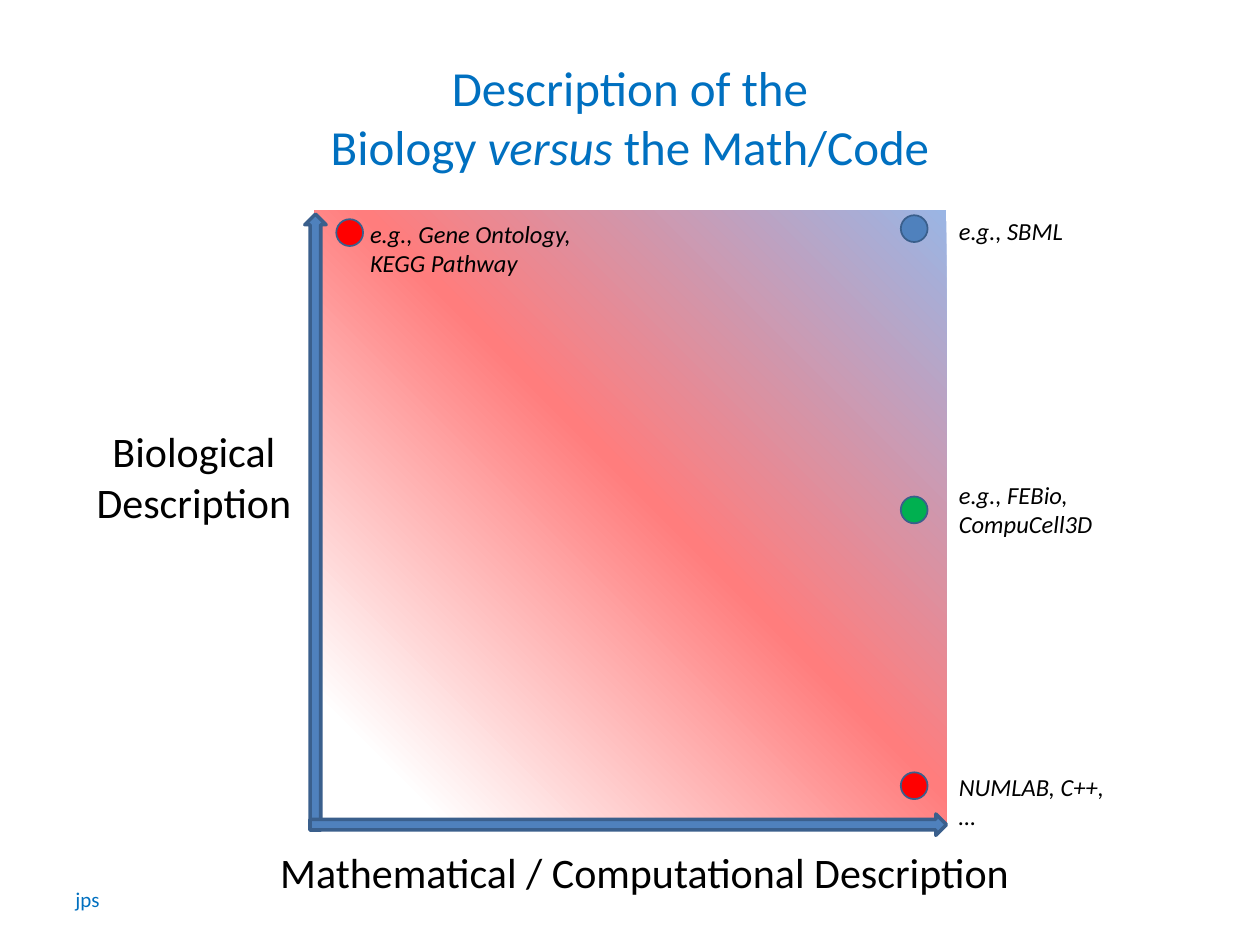
from lxml.etree import SubElement
from pptx import Presentation
from pptx.dml.color import RGBColor
from pptx.enum.shapes import MSO_SHAPE
from pptx.enum.text import MSO_ANCHOR, PP_ALIGN
from pptx.oxml.ns import qn
from pptx.util import Cm, Pt

COLORS = {
    "blue": "0070C0",
    "black": "000000",
    "axis": "4F81BD",
    "outline": "3A5F8C",
    "red": "FF0000",
    "green": "00B050",
    "sky": "9AB5E4",
    "rose": "FF7D7D",
    "white": "FFFFFF",
}

presentation = Presentation()
presentation.slide_width = Cm(25.4)
presentation.slide_height = Cm(19.05)
slide = presentation.slides.add_slide(presentation.slide_layouts[6])


def add_text(text, *, box, size, color="black", italic=False, wrap=False,
             align=PP_ALIGN.LEFT, anchor=MSO_ANCHOR.TOP):
    frame = slide.shapes.add_textbox(*map(Cm, box)).text_frame
    frame.word_wrap = wrap
    frame.vertical_anchor = anchor
    for index, content in enumerate(text.split("\n")):
        paragraph = frame.add_paragraph() if index else frame.paragraphs[0]
        paragraph.alignment = align
        for part, words in enumerate(content.split("*")):
            for row, line in enumerate(words.split("\v")):
                if row:
                    paragraph.add_line_break()
                run = paragraph.add_run()
                run.text = line
                run.font.name = "Calibri"
                run.font.size = Pt(size)
                run.font.italic = italic or part % 2 == 1
                run.font.color.rgb = RGBColor.from_string(COLORS[color])


def add_outlined(preset, box, color, weight):
    shape = slide.shapes.add_shape(preset, *map(Cm, box))
    shape.shadow.inherit = False
    shape.fill.solid()
    shape.fill.fore_color.rgb = RGBColor.from_string(COLORS[color])
    shape.line.color.rgb = RGBColor.from_string(COLORS["outline"])
    shape.line.width = Pt(weight)
    return shape


add_text("jps", box=(1.27, 17.75, 1.02, 0.76), size=12, color="blue")

field = slide.shapes.add_shape(MSO_SHAPE.RECTANGLE, Cm(6.35), Cm(4.24), Cm(12.73), Cm(12.37))
field.shadow.inherit = False
field.line.fill.background()
field.fill.gradient()
field.fill.gradient_angle = 225
stops = field.element.spPr.find(qn("a:gradFill")).find(qn("a:gsLst"))
for stop in list(stops):
    stops.remove(stop)
for percent, color in [(0, "sky"), (47, "rose"), (90, "white"), (100, "white")]:
    stop = SubElement(stops, qn("a:gs"), pos=str(percent * 1000))
    SubElement(stop, qn("a:srgbClr"), val=COLORS[color])

add_text("Description of the\vBiology *versus* the Math/Code",
         box=(1.27, 0.76, 22.86, 3.18), size=28, color="blue", wrap=True,
         align=PP_ALIGN.CENTER, anchor=MSO_ANCHOR.MIDDLE)

biology_axis = add_outlined(MSO_SHAPE.RIGHT_ARROW, (0.15, 10.31, 12.42, 0.43), "axis", 2)
biology_axis.rotation = 270
add_outlined(MSO_SHAPE.RIGHT_ARROW, (6.25, 16.41, 12.83, 0.43), "axis", 2)

add_text("Mathematical / Computational Description", box=(5.4, 16.94, 15.34, 1.27), size=24)
add_text("Biological Description", box=(1.47, 8.46, 4.88, 2.31), size=24,
         wrap=True, align=PP_ALIGN.CENTER)

examples = [
    ("e.g., Gene Ontology,\vKEGG Pathway", (7.21, 4.29, 4.6, 1.45), (6.78, 4.42), "red"),
    ("e.g., SBML", (19.08, 4.24, 2.62, 0.86), (18.16, 4.34), "axis"),
    ("e.g., FEBio,\nCompuCell3D", (19.08, 9.55, 3.23, 1.45), (18.16, 10.01), "green"),
    ("NUMLAB, C++, …", (19.08, 15.44, 3.78, 0.86), (18.16, 15.57), "red"),
]
for label, box, corner, color in examples:
    add_outlined(MSO_SHAPE.OVAL, (*corner, 0.54, 0.54), color, 1)
    add_text(label, box=box, size=14, italic=True)

presentation.save("out.pptx")
